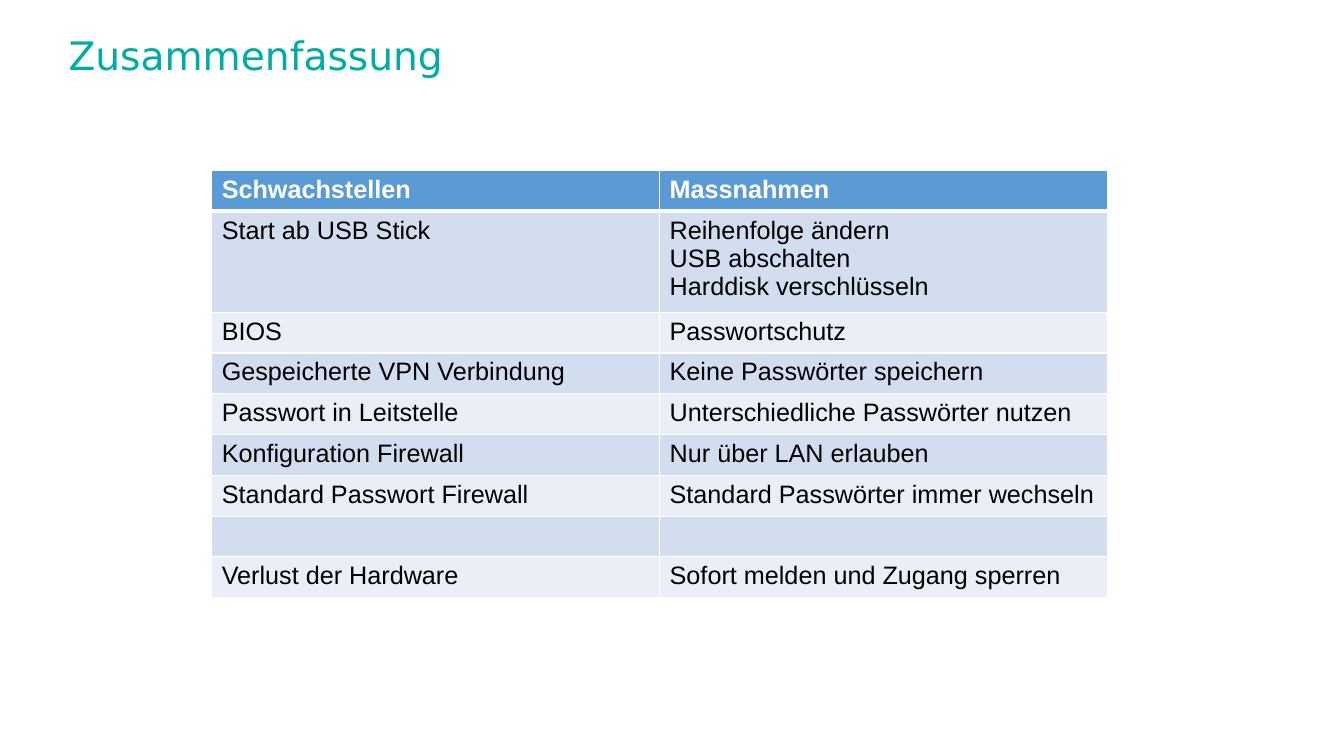
from dataclasses import dataclass

from lxml.etree import SubElement
from pptx import Presentation
from pptx.dml.color import RGBColor
from pptx.enum.text import MSO_ANCHOR
from pptx.oxml.ns import qn
from pptx.util import Inches, Pt

SLIDE_WIDTH, SLIDE_HEIGHT = Inches(13.33), Inches(7.5)
WHITE, BLACK, TEAL = "FFFFFF", "000000", "00ADA5"
HEADER_FILL, BANDS = "5B9BD5", ("D2DEEF", "EAEFF7")
ROW_SHARE = 5.4
EXTRA_LINE_SHARE = 3.6


@dataclass
class Entry:
    weakness: str
    measures: str


ENTRIES = [
    Entry("Schwachstellen", "Massnahmen"),
    Entry("Start ab USB Stick", "Reihenfolge ändern\nUSB abschalten\nHarddisk verschlüsseln"),
    Entry("BIOS", "Passwortschutz"),
    Entry("Gespeicherte VPN Verbindung", "Keine Passwörter speichern"),
    Entry("Passwort in Leitstelle", "Unterschiedliche Passwörter nutzen"),
    Entry("Konfiguration Firewall", "Nur über LAN erlauben"),
    Entry("Standard Passwort Firewall", "Standard Passwörter immer wechseln"),
    Entry("", ""),
    Entry("Verlust der Hardware", "Sofort melden und Zugang sperren"),
]


def color(value: str) -> RGBColor:
    return RGBColor.from_string(value)


def across(percent: float) -> int:
    return int(SLIDE_WIDTH * percent / 100)


def down(percent: float) -> int:
    return int(SLIDE_HEIGHT * percent / 100)


def style_text(frame, name: str, size: float, text_color: str, bold: bool = False) -> None:
    for paragraph in frame.paragraphs:
        font = paragraph.font
        font.name, font.size, font.bold = name, Pt(size), bold
        font.color.rgb = color(text_color)


def add_borders(cell, top: float, bottom: float) -> None:
    """Draw white borders; they must stand before the fill in the cell properties."""
    properties = cell._tc.get_or_add_tcPr()
    widths = {"a:lnL": 1, "a:lnR": 1, "a:lnT": top, "a:lnB": bottom}
    for position, (tag, width) in enumerate(widths.items()):
        line = SubElement(properties, qn(tag), w=str(Pt(width)))
        SubElement(SubElement(line, qn("a:solidFill")), qn("a:srgbClr"), val=WHITE)
        properties.insert(position, line)


def add_title(slide, text: str) -> None:
    box = slide.shapes.add_textbox(across(5.1), down(4.8), across(88.1), down(13.5))
    frame = box.text_frame
    frame.word_wrap = True
    frame.vertical_anchor = MSO_ANCHOR.TOP
    frame.margin_left = frame.margin_right = frame.margin_top = frame.margin_bottom = 0
    frame.text = text
    frame.paragraphs[0].line_spacing = 0.9
    style_text(frame, "DejaVu Sans", 28, TEAL)


def add_summary_table(slide, entries: list[Entry]) -> None:
    shares = [ROW_SHARE + EXTRA_LINE_SHARE * entry.measures.count("\n") for entry in entries]
    table = slide.shapes.add_table(
        len(entries), 2, across(15.75), down(22.55), across(66.66), down(sum(shares))
    ).table
    for index, (entry, share) in enumerate(zip(entries, shares)):
        table.rows[index].height = down(share)
        header = index == 0
        for column, text in enumerate((entry.weakness, entry.measures)):
            cell = table.cell(index, column)
            cell.text = text
            cell.fill.solid()
            cell.fill.fore_color.rgb = color(HEADER_FILL if header else BANDS[(index - 1) % 2])
            style_text(cell.text_frame, "Arial", 18, WHITE if header else BLACK, header)
            add_borders(cell, top=3 if index == 1 else 1, bottom=3 if header else 1)


def main() -> None:
    presentation = Presentation()
    presentation.slide_width, presentation.slide_height = SLIDE_WIDTH, SLIDE_HEIGHT
    slide = presentation.slides.add_slide(presentation.slide_layouts[6])
    add_title(slide, "Zusammenfassung")
    add_summary_table(slide, ENTRIES)
    presentation.save("out.pptx")


if __name__ == "__main__":
    main()
